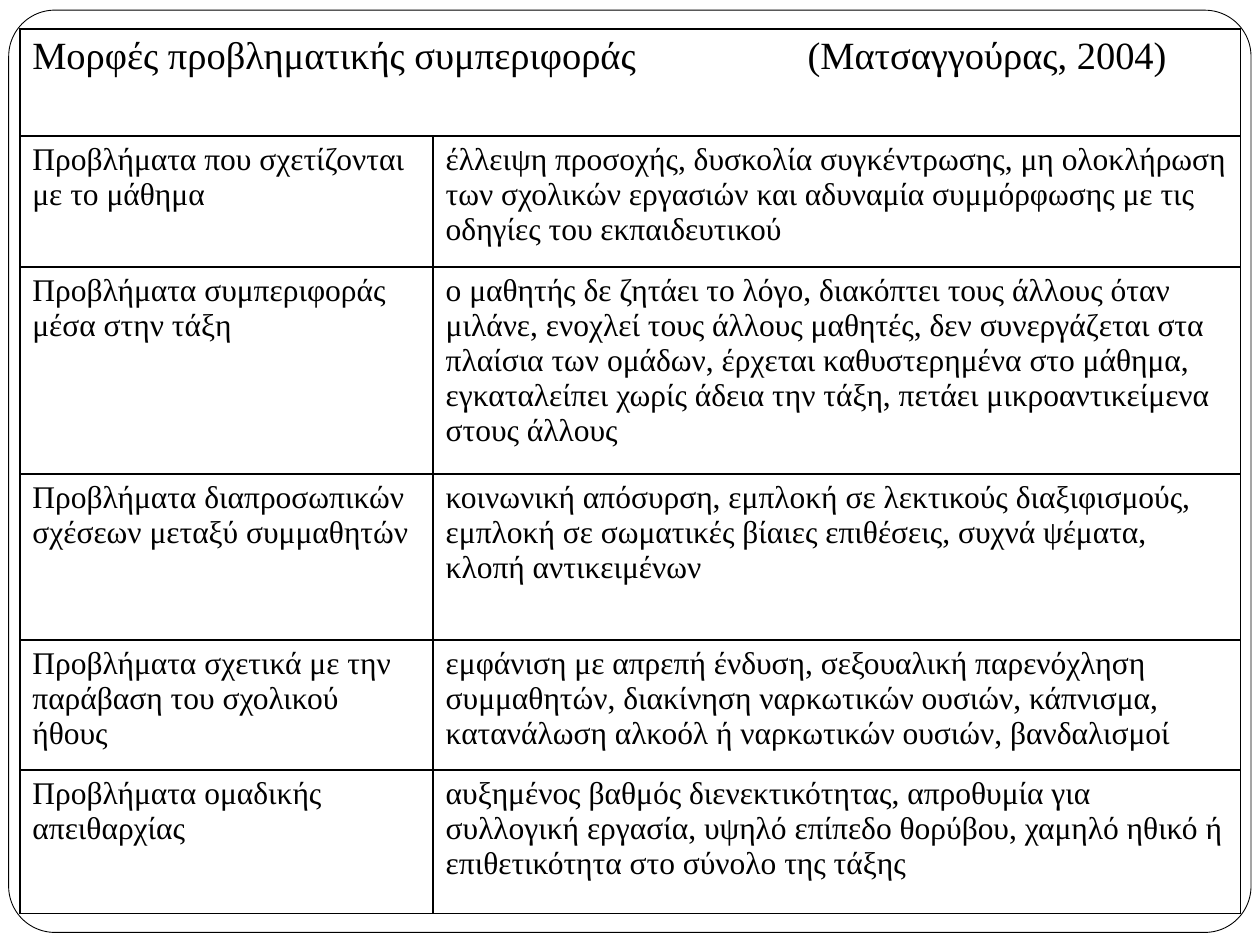
from typing import NamedTuple

from lxml import etree
from pptx import Presentation
from pptx import util as u
from pptx.dml.color import RGBColor
from pptx.enum import shapes, text
from pptx.oxml import ns

COLORS = {"ink": "000000", "paper": "FFFFFF"}
FONT = "Times New Roman"
TITLE_SIZE, BODY_SIZE = 22, 18
BORDER_WIDTH = 1
CITATION_TAB = 443
COLUMN_WIDTHS = (236.2, 461.5)
TITLE_HEIGHT = 61.2


class Problem(NamedTuple):
    height: float
    category: str
    examples: str


TITLE = "Μορφές προβληματικής συμπεριφοράς\t(Ματσαγγούρας, 2004)"
PROBLEMS = [
    Problem(74.9, "Προβλήματα που σχετίζονται με το μάθημα",
            "έλλειψη προσοχής, δυσκολία συγκέντρωσης, μη ολοκλήρωση των σχολικών "
            "εργασιών και αδυναμία συμμόρφωσης με τις οδηγίες του εκπαιδευτικού"),
    Problem(118.1, "Προβλήματα συμπεριφοράς μέσα στην τάξη",
            "ο μαθητής δε ζητάει το λόγο, διακόπτει τους άλλους όταν μιλάνε, "
            "ενοχλεί τους άλλους μαθητές, δεν συνεργάζεται στα πλαίσια των ομάδων, "
            "έρχεται καθυστερημένα στο μάθημα, εγκαταλείπει χωρίς άδεια την τάξη, "
            "πετάει μικροαντικείμενα στους άλλους"),
    Problem(95, "Προβλήματα διαπροσωπικών σχέσεων μεταξύ συμμαθητών",
            "κοινωνική απόσυρση, εμπλοκή σε λεκτικούς διαξιφισμούς, εμπλοκή σε "
            "σωματικές βίαιες επιθέσεις, συχνά ψέματα, κλοπή αντικειμένων"),
    Problem(74.2, "Προβλήματα σχετικά με την παράβαση του σχολικού ήθους",
            "εμφάνιση με απρεπή ένδυση, σεξουαλική παρενόχληση συμμαθητών, "
            "διακίνηση ναρκωτικών ουσιών, κάπνισμα, κατανάλωση αλκοόλ ή "
            "ναρκωτικών ουσιών, βανδαλισμοί"),
    Problem(82.1, "Προβλήματα ομαδικής απειθαρχίας",
            "αυξημένος βαθμός διενεκτικότητας, απροθυμία για συλλογική εργασία, "
            "υψηλό επίπεδο θορύβου, χαμηλό ηθικό ή επιθετικότητα στο σύνολο της "
            "τάξης"),
]


def color(name: str) -> RGBColor:
    return RGBColor.from_string(COLORS[name])


def add_frame(page) -> None:
    frame = page.shapes.add_shape(
        shapes.MSO_SHAPE.ROUNDED_RECTANGLE,
        u.Pt(5), u.Pt(5.8), u.Pt(709.9), u.Pt(527))
    frame.adjustments[0] = 0.05
    frame.shadow.inherit = False
    frame.fill.solid()
    frame.fill.fore_color.rgb = color("paper")
    frame.line.color.rgb = color("ink")
    frame.line.width = u.Pt(0.5)


def style_cell(cell) -> None:
    """Clear the fill and rule all four sides; borders precede the fill."""
    cell.fill.background()
    properties = cell._tc.get_or_add_tcPr()
    for index, side in enumerate(("lnL", "lnR", "lnT", "lnB")):
        border = etree.Element(ns.qn(f"a:{side}"), w=str(u.Pt(BORDER_WIDTH)))
        fill = etree.SubElement(border, ns.qn("a:solidFill"))
        etree.SubElement(fill, ns.qn("a:srgbClr"), val=COLORS["ink"])
        properties.insert(index, border)


def write_cell(cell, wording: str, size: float):
    para = cell.text_frame.paragraphs[0]
    para.alignment = text.PP_ALIGN.LEFT
    span = para.add_run()
    span.text = wording
    span.font.name = FONT
    span.font.size = u.Pt(size)
    span.font.bold = False
    span.font.color.rgb = color("ink")
    return para


def add_tab_stop(para, position: float) -> None:
    stops = etree.SubElement(para._p.get_or_add_pPr(), ns.qn("a:tabLst"))
    etree.SubElement(stops, ns.qn("a:tab"), pos=str(u.Pt(position)), algn="l")


def add_problem_table(page) -> None:
    heights = [TITLE_HEIGHT] + [problem.height for problem in PROBLEMS]
    table = page.shapes.add_table(
        len(heights), len(COLUMN_WIDTHS), u.Pt(11.3), u.Pt(16.6),
        u.Pt(sum(COLUMN_WIDTHS)), u.Pt(sum(heights))).table
    table.first_row = table.horz_banding = False
    for column, width in zip(table.columns, COLUMN_WIDTHS):
        column.width = u.Pt(width)
    for row, height in zip(table.rows, heights):
        row.height = u.Pt(height)
    for cell in table.iter_cells():
        style_cell(cell)

    # Title row across both columns, citation at its own tab stop
    table.cell(0, 0).merge(table.cell(0, 1))
    add_tab_stop(write_cell(table.cell(0, 0), TITLE, TITLE_SIZE), CITATION_TAB)

    # One row per kind of problem
    for row, problem in enumerate(PROBLEMS, start=1):
        write_cell(table.cell(row, 0), problem.category, BODY_SIZE)
        write_cell(table.cell(row, 1), problem.examples, BODY_SIZE)


def main() -> None:
    deck = Presentation()
    deck.slide_width, deck.slide_height = u.Pt(720), u.Pt(540)
    page = deck.slides.add_slide(deck.slide_layouts[6])
    add_frame(page)
    add_problem_table(page)
    deck.save("out.pptx")


if __name__ == "__main__":
    main()
